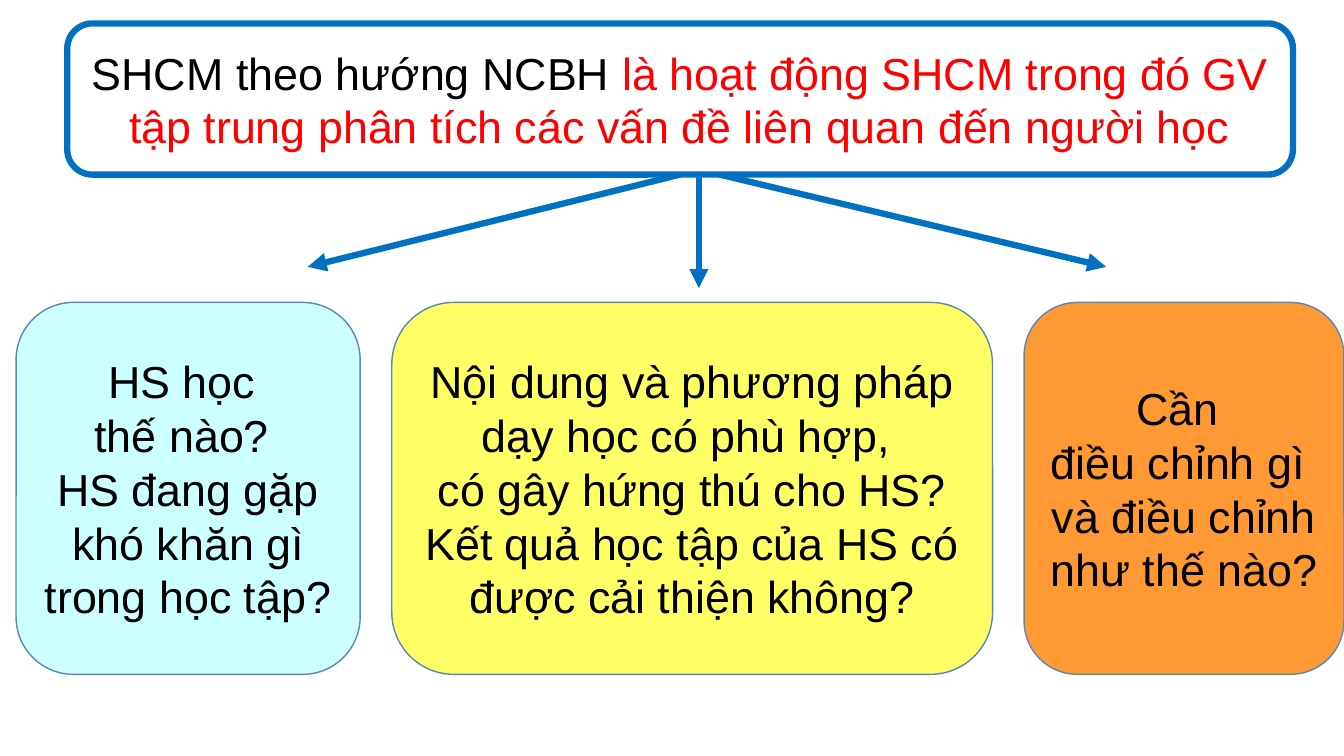
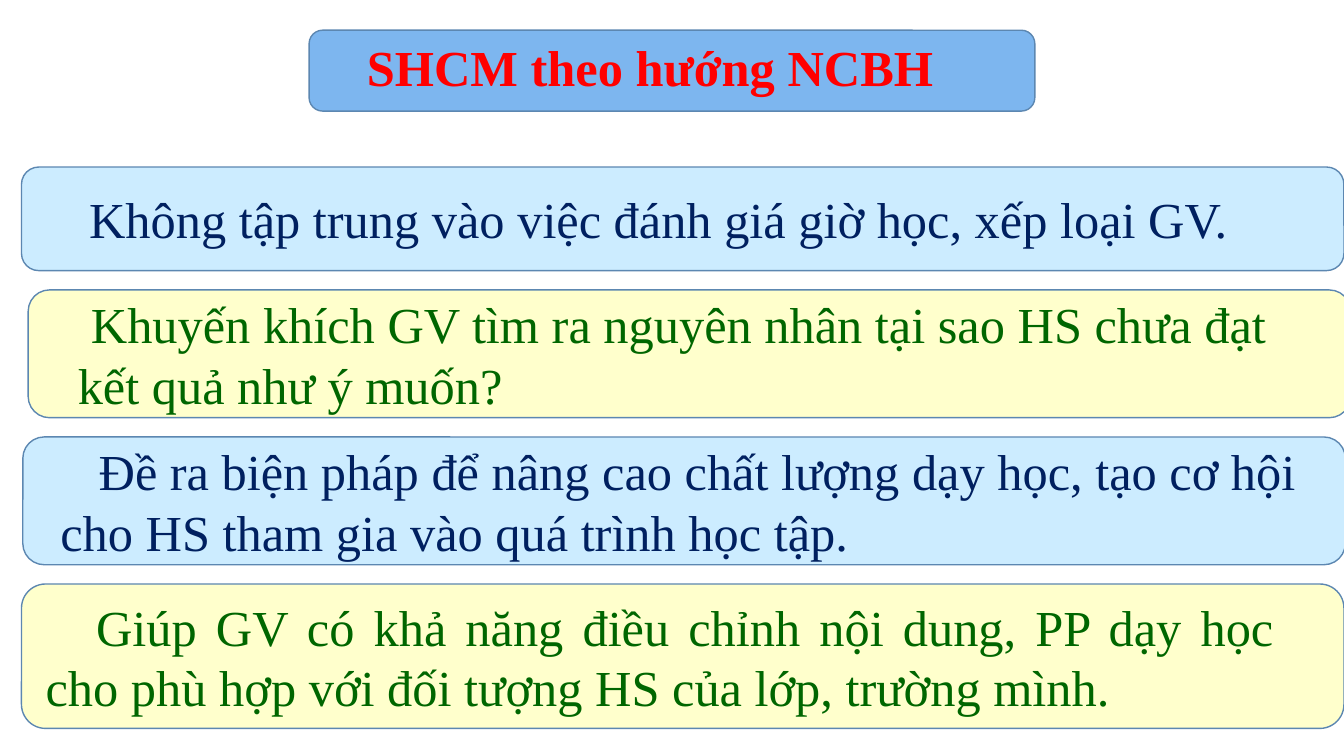
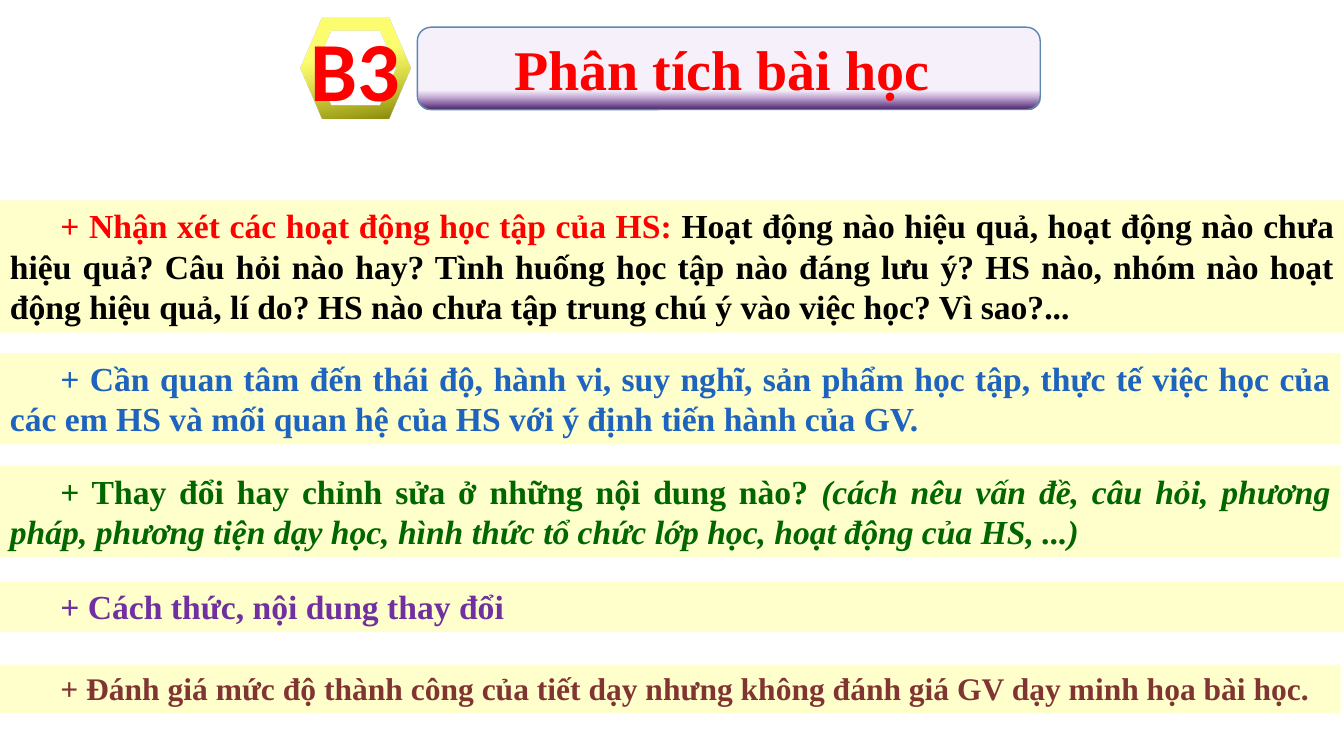
from pptx import Presentation, util as u
from pptx.dml.color import RGBColor
from pptx.enum import shapes, text
from pptx.oxml.ns import qn
from lxml import etree

WIDTH, HEIGHT = u.Inches(13.33), u.Inches(7.5)
SANS, SERIF, BADGE_FONT = "Arial", "Times New Roman", "Calibri"
BLACK = RGBColor(0x00, 0x00, 0x00)
WHITE = RGBColor(0xFF, 0xFF, 0xFF)
RED = RGBColor(0xFF, 0x00, 0x00)
BLUE = RGBColor(0x00, 0x70, 0xC0)
OUTLINE = RGBColor(0x5C, 0x87, 0xB1)
CYAN = RGBColor(0xCC, 0xFF, 0xFF)
YELLOW = RGBColor(0xFF, 0xFF, 0x66)
ORANGE = RGBColor(0xFF, 0x99, 0x33)
SKY = RGBColor(0x7D, 0xB6, 0xEF)
PALE_BLUE = RGBColor(0xCC, 0xEC, 0xFF)
CREAM = RGBColor(0xFF, 0xFF, 0xCC)
NAVY = RGBColor(0x00, 0x20, 0x60)
GREEN = RGBColor(0x00, 0x66, 0x00)
MID_BLUE = RGBColor(0x1E, 0x63, 0xBD)
PURPLE = RGBColor(0x70, 0x30, 0xA0)
BROWN = RGBColor(0x81, 0x35, 0x33)
VIOLET = RGBColor(0x7B, 0x32, 0xB2)
DARK_VIOLET = RGBColor(0x40, 0x1A, 0x5D)
LEMON = RGBColor(0xFB, 0xFB, 0x11)
OLIVE = RGBColor(0x83, 0x83, 0x09)
LEFT, CENTER, JUSTIFY = text.PP_ALIGN.LEFT, text.PP_ALIGN.CENTER, text.PP_ALIGN.JUSTIFY
MIDDLE, TOP = text.MSO_ANCHOR.MIDDLE, text.MSO_ANCHOR.TOP


def across(share):
    """Return a percentage of the slide width."""
    return round(WIDTH * share / 100)


def down(share):
    """Return a percentage of the slide height."""
    return round(HEIGHT * share / 100)


def area(x, y, width, height):
    """Turn percentages of the slide into a left, top, width and height."""
    return across(x), down(y), across(width), down(height)


def write(shape, *runs, size, font=SERIF, bold=False, align=CENTER, anchor=MIDDLE,
          indent=0, left=0.1, right=0.1, wrap=True):
    """Write runs of (text, colour[, italic]) as one paragraph in a shape."""
    frame = shape.text_frame
    frame.auto_size = text.MSO_AUTO_SIZE.NONE
    frame.word_wrap, frame.vertical_anchor = wrap, anchor
    frame.margin_left, frame.margin_right = u.Inches(left), u.Inches(right)
    paragraph = frame.paragraphs[0]
    paragraph.alignment = align
    if indent:
        paragraph._p.get_or_add_pPr().set("indent", str(u.Inches(indent)))
    for words, color, *italic in runs:
        for number, line in enumerate(words.split("\n")):
            if number:
                paragraph.add_line_break()
            run = paragraph.add_run()
            run.text = line
            run.font.name, run.font.size = font, u.Pt(size)
            run.font.bold, run.font.italic = bold, bool(italic)
            run.font.color.rgb = color


def panel(slide, box, fill=None, outline=OUTLINE, weight=1, rounded=True):
    """Add a rectangle that is rounded or plain."""
    kind = shapes.MSO_SHAPE.ROUNDED_RECTANGLE if rounded else shapes.MSO_SHAPE.RECTANGLE
    shape = slide.shapes.add_shape(kind, *area(*box))
    shape.shadow.inherit = False
    if fill is not None:
        shape.fill.solid()
        shape.fill.fore_color.rgb = fill
    if outline is None:
        shape.line.fill.background()
    else:
        shape.line.color.rgb, shape.line.width = outline, u.Pt(weight)
    return shape


def shade(shape, start, end, begin_at, opacity, angle):
    """Fill a shape with a gradient whose first colour is see-through."""
    shape.fill.gradient()
    shape.fill.gradient_angle = 360 - angle
    stops = shape.fill.gradient_stops
    for stop, color, position in zip(stops, (start, end), (begin_at, 1)):
        stop.color.rgb, stop.position = color, position
    first = shape._element.xpath(".//a:gs/a:srgbClr")[0]
    etree.SubElement(first, qn("a:alpha")).set("val", str(opacity * 1000))


def title(slide, box, *runs, **style):
    """Place the title placeholder in front of its panel and fill it."""
    heading = slide.shapes.title
    heading.left, heading.top, heading.width, heading.height = area(*box)
    slide.shapes._spTree.append(heading._element)
    write(heading, *runs, **style)


def arrow(slide, start, end, source=None):
    """Draw a thick blue arrow, joined to the bottom of a source if given."""
    (x1, y1), (x2, y2) = start, end
    line = slide.shapes.add_connector(shapes.MSO_CONNECTOR.STRAIGHT,
                                      across(x1), down(y1), across(x2), down(y2))
    if source is not None:
        line.begin_connect(source, 2)
    line.line.color.rgb, line.line.width = BLUE, u.Pt(4.5)
    etree.SubElement(line.line._get_or_add_ln(), qn("a:tailEnd")).set("type", "triangle")
    etree.SubElement(line._element.spPr, qn("a:effectLst"))


def hexagon(center, half_width, half_top, half_height):
    """Return the corners of a hexagon around a centre."""
    signs = [(-half_top, -1), (half_top, -1), (half_width, 0),
             (half_top, 1), (-half_top, 1), (-half_width, 0)]
    return [(across(center[0] + dx), down(center[1] + side * half_height))
            for dx, side in signs]


def badge(slide, center, label):
    """Add a hexagonal ring with a label."""
    outer = hexagon(center, 4.1, 2.48, 6.73)
    inner = hexagon(center, 3, 1.8, 4.93)[::-1]
    builder = slide.shapes.build_freeform(*outer[0], scale=1.0)
    builder.add_line_segments(outer[1:], close=True)
    builder.move_to(*inner[0])
    builder.add_line_segments(inner[1:], close=True)
    ring = builder.convert_to_shape()
    ring.shadow.inherit = False
    ring.line.fill.background()
    shade(ring, LEMON, OLIVE, 0.38, 60, 80)
    write(ring, (label, RED), size=60, font=BADGE_FONT, bold=True, wrap=False)


def definition_slide(slide):
    """Build the definition with three questions below it."""
    box = (5, 3.1, 91.2, 20)
    banner = panel(slide, box, WHITE, BLUE, 4.5)
    title(slide, box, ("SHCM theo hướng NCBH ", BLACK),
          ("là hoạt động SHCM trong đó GV tập trung phân tích các vấn đề "
           "liên quan đến người học", RED), size=32, font=SANS, left=0.17, right=0.17)
    questions = [
        (25.6, CYAN, "HS học \nthế nào? \nHS đang gặp khó khăn gì trong học tập? "),
        (44.7, YELLOW, "Nội dung và phương pháp dạy học có phù hợp, \n"
                       "có gây hứng thú cho HS? Kết quả học tập của HS có "
                       "được cải thiện không?"),
        (23.8, ORANGE, "Cần \nđiều chỉnh gì \nvà điều chỉnh như thế nào?"),
    ]
    x, gap = 1.2, 2.35
    for width, fill, question in questions:
        card = panel(slide, (x, 40, width, 49.2), fill)
        write(card, (question, BLACK), size=32, font=SANS)
        x += width + gap
    bottom = box[1] + box[3]
    arrow(slide, (50.6, bottom), (22.9, 35.3), banner)
    arrow(slide, (53.55, bottom), (82.3, 35.3))
    arrow(slide, (52, bottom), (52, 38.1))


def principles_slide(slide):
    """Build the four principles in bands of alternating colour."""
    panel(slide, (23, 4, 54, 10.7), SKY)
    title(slide, (25.95, 4, 44.85, 9.5), ("SHCM theo hướng NCBH", RED), size=36, bold=True)
    principles = [
        (1.6, 13.7, "Không tập trung vào việc đánh giá giờ học, xếp loại GV.",
         dict(align=JUSTIFY, indent=0.5, left=0.12, right=0.97)),
        (2.1, 16.9, "Khuyến khích GV tìm ra nguyên nhân tại sao HS chưa đạt "
                    "kết quả như ý muốn?",
         dict(align=LEFT, indent=0.13, left=0.43, right=0.24)),
        (1.7, 16.9, "Đề ra biện pháp để nâng cao chất lượng dạy học, tạo cơ hội "
                    "cho HS tham gia vào quá trình học tập.",
         dict(align=LEFT, indent=0.38, left=0.31, right=0.04)),
        (1.6, 19.1, "Giúp GV có khả năng điều chỉnh nội dung, PP dạy học "
                    "cho phù hợp với đối tượng HS của lớp, trường mình.",
         dict(align=JUSTIFY, indent=0.5, left=0.17, right=0.62)),
    ]
    y, gap = 22.1, 2.55
    for number, (x, height, principle, style) in enumerate(principles):
        fill, color = ((PALE_BLUE, NAVY), (CREAM, GREEN))[number % 2]
        band = panel(slide, (x, y, 98.4, height), fill)
        write(band, (principle, color), size=36, **style)
        y += height + gap


def analysis_slide(slide):
    """Build the lesson analysis step with its notes."""
    badge(slide, (26.45, 9), "B3")
    box = (31.05, 3.6, 46.35, 10.9)
    shade(panel(slide, box), VIOLET, DARK_VIOLET, 0.76, 7, 90)
    title(slide, box, ("Phân tích bài học ", RED), size=40, bold=True)
    notes = [
        (26.5, 100, 17.5, 24, [
            ("+ Nhận xét các hoạt động học tập của HS: ", RED),
            ("Hoạt động nào hiệu quả, hoạt động nào chưa hiệu quả? Câu hỏi nào hay? "
             "Tình huống học tập nào đáng lưu ý? HS nào, nhóm nào hoạt động hiệu quả, "
             "lí do? HS nào chưa tập trung chú ý vào việc học? Vì sao?...", BLACK)]),
        (46.7, 99.75, 12.1, 24, [
            ("+ Cần quan tâm đến thái độ, hành vi, suy nghĩ, sản phẩm học tập, thực tế "
             "việc học của các em HS và mối quan hệ của HS với ý định tiến hành của GV.",
             MID_BLUE)]),
        (61.6, 99.75, 12.1, 24, [
            ("+ Thay đổi hay chỉnh sửa ở những nội dung nào? ", GREEN),
            ("(cách nêu vấn đề, câu hỏi, phương pháp, phương tiện dạy học, hình thức "
             "tổ chức lớp học, hoạt động của HS, ...) ", GREEN, True)]),
        (76.9, 100, 6.7, 24, [("+ Cách thức, nội dung thay đổi", PURPLE)]),
        (87.9, 99.75, 6.4, 22.5, [
            ("+ Đánh giá mức độ thành công của tiết dạy nhưng không đánh giá GV "
             "dạy minh họa bài học.", BROWN)]),
    ]
    for y, width, height, size, runs in notes:
        note = panel(slide, (0, y, width, height), CREAM, None, rounded=False)
        write(note, *runs, size=size, bold=True, align=JUSTIFY, anchor=TOP, indent=0.5)


def main():
    """Build and save the presentation."""
    deck = Presentation()
    deck.slide_width, deck.slide_height = WIDTH, HEIGHT
    title_only = deck.slide_layouts[5]
    for build in (definition_slide, principles_slide, analysis_slide):
        build(deck.slides.add_slide(title_only))
    deck.save("out.pptx")


if __name__ == "__main__":
    main()
